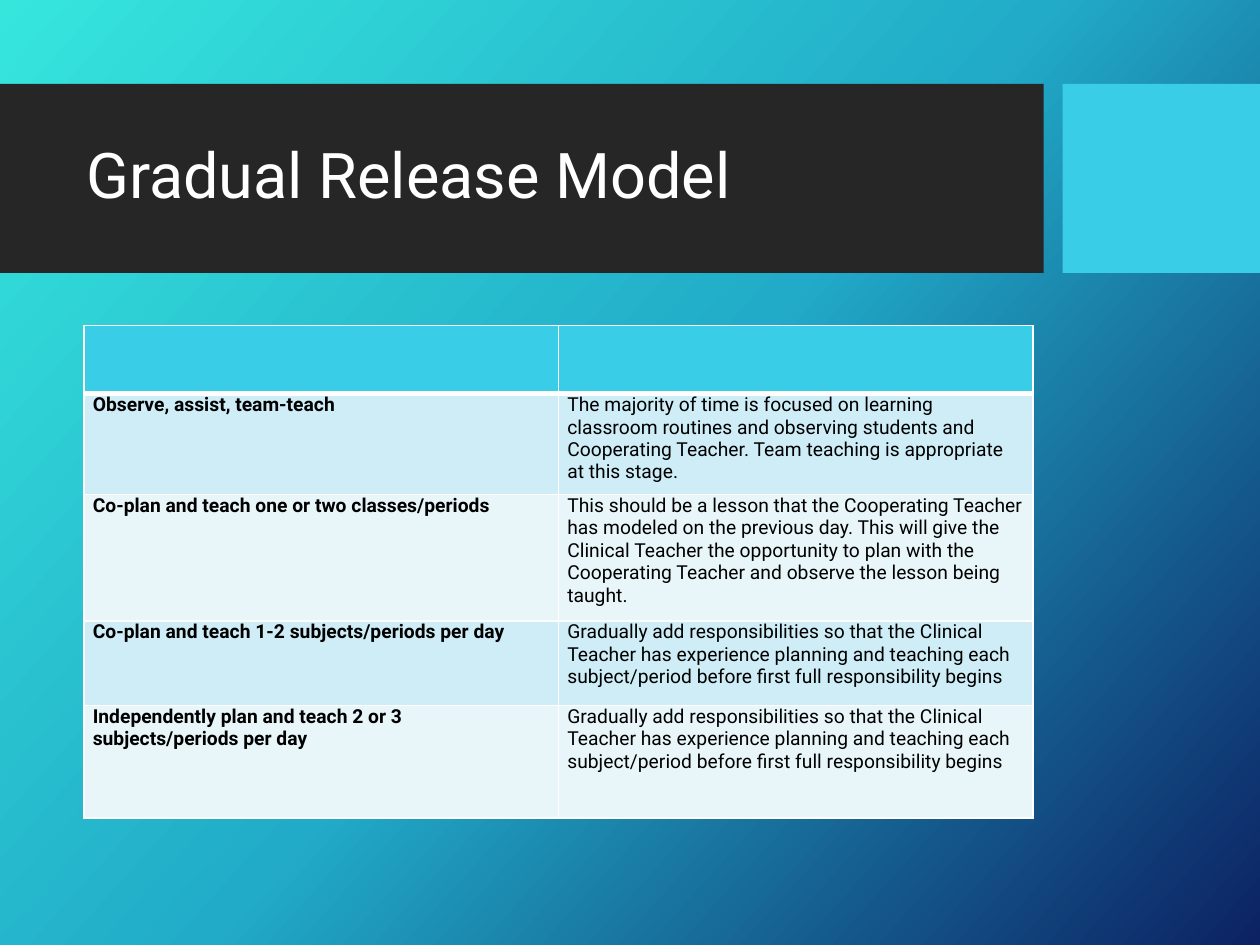
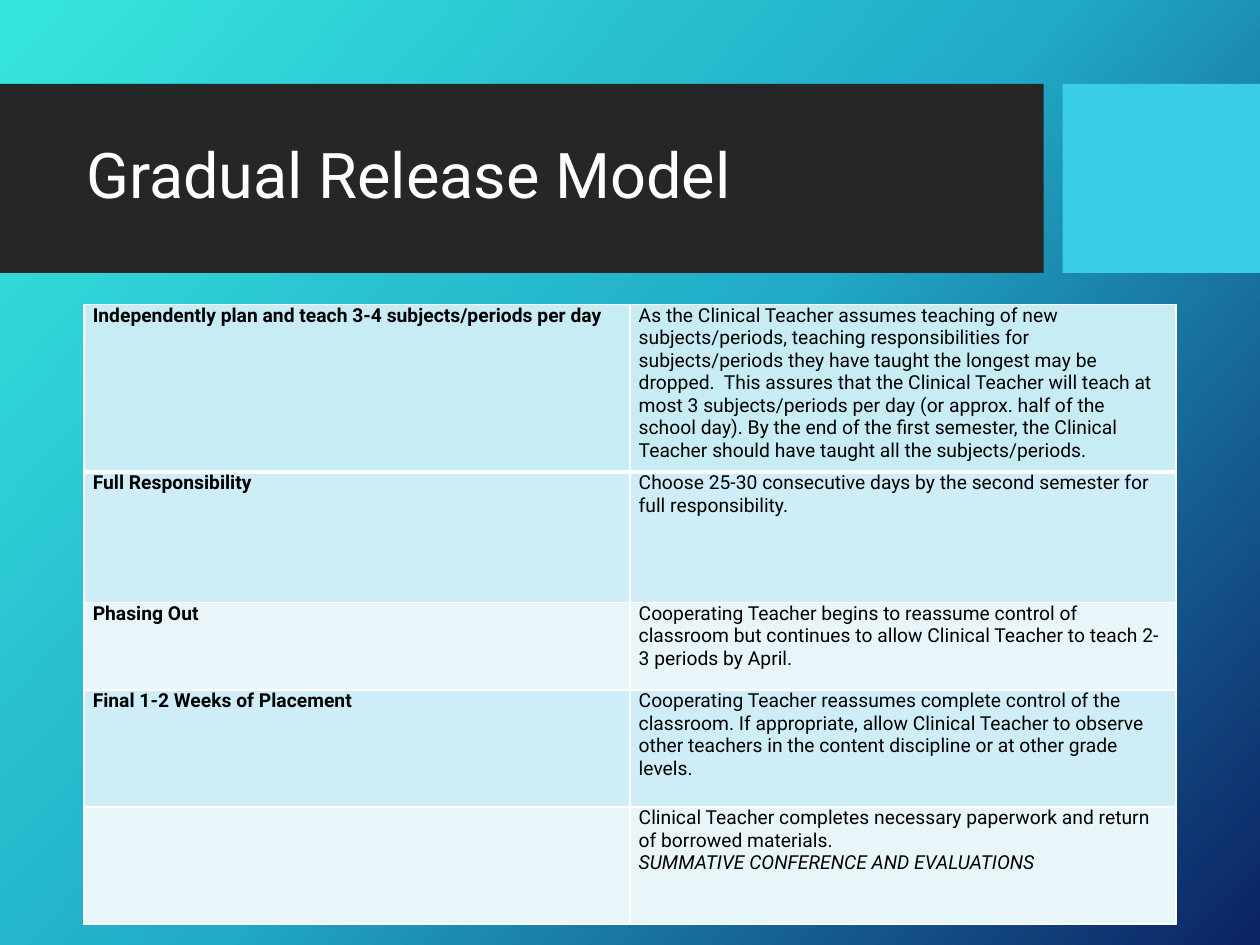
from copy import deepcopy

from lxml import etree
from pptx import Presentation
from pptx.dml.color import RGBColor
from pptx.enum.shapes import MSO_SHAPE
from pptx.enum.text import MSO_ANCHOR, MSO_AUTO_SIZE, PP_ALIGN
from pptx.oxml.ns import qn
from pptx.util import Inches, Pt

RECTANGLE = MSO_SHAPE.RECTANGLE
MIDDLE = MSO_ANCHOR.MIDDLE
LEFT = PP_ALIGN.LEFT
NO_AUTOFIT = MSO_AUTO_SIZE.NONE

WIDTH, HEIGHT = Inches(10), Inches(7.5)
COLUMN, ROW = WIDTH / 60, HEIGHT / 90
FONT = "Roboto"
TITLE = "Gradual Release Model"
TITLE_LAYOUT = 5

WHITE = RGBColor(0xFF, 0xFF, 0xFF)
BLACK = RGBColor(0x00, 0x00, 0x00)
CHARCOAL = RGBColor(0x26, 0x26, 0x26)
CYAN = RGBColor(0x39, 0xCD, 0xE7)
AQUA = RGBColor(0xC8, 0xEC, 0xF4)
BAND_DARK = RGBColor(0xCE, 0xED, 0xF6)
BAND_LIGHT = RGBColor(0xE8, 0xF6, 0xFA)
GRADIENT = [
    (0, RGBColor(0x36, 0xE6, 0xDD)),
    (0.5, RGBColor(0x21, 0xAB, 0xC8)),
    (1, RGBColor(0x0C, 0x22, 0x63)),
]
GRADIENT_ANGLE = 318

TITLE_BAND = (0, 8, 49.7, 18)
ACCENT_BAND = (50.6, 8, 9.4, 18)
TITLE_BOX = (3.5, 9.85, 45.25, 14.15)

GRADUAL = (
    "Gradually add responsibilities so that the Clinical Teacher has experience "
    "planning and teaching each subject/period before first full responsibility begins"
)
EARLY_STAGES = [
    (6.5, "", []),
    (9.6, "Observe, assist, team-teach", [
        "The majority of time is focused on learning classroom routines and observing "
        "students and Cooperating Teacher. Team teaching is appropriate at this stage."]),
    (12.05, "Co-plan and teach one or two classes/periods", [
        "This should be a lesson that the Cooperating Teacher has modeled on the previous "
        "day. This will give the Clinical Teacher the opportunity to plan with the "
        "Cooperating Teacher and observe the lesson being taught."]),
    (8.05, "Co-plan and teach 1-2 subjects/periods per day", [GRADUAL]),
    (10.7, "Independently plan and teach 2 or 3 subjects/periods per day", [GRADUAL]),
]
LATER_STAGES = [
    (15.95, "Independently plan and teach 3-4 subjects/periods per day", [
        "As the Clinical Teacher assumes teaching of new subjects/periods, teaching "
        "responsibilities for subjects/periods they have taught the longest may be "
        "dropped.  This assures that the Clinical Teacher will teach at most 3 "
        "subjects/periods per day (or approx. half of the school day). By the end of the "
        "first semester, the Clinical Teacher should have taught all the subjects/periods."]),
    (12.45, "Full Responsibility", [
        "Choose 25-30 consecutive days by the second semester for full responsibility."]),
    (8.3, "Phasing Out", [
        "Cooperating Teacher begins to reassume control of classroom but continues to "
        "allow Clinical Teacher to teach 2-3 periods by April."]),
    (11.15, "Final 1-2 Weeks of Placement", [
        "Cooperating Teacher reassumes complete control of the classroom. If appropriate, "
        "allow Clinical Teacher to observe other teachers in the content discipline or at "
        "other grade levels."]),
    (11.15, "", [
        "Clinical Teacher completes necessary paperwork and return of borrowed materials.",
        "SUMMATIVE CONFERENCE AND EVALUATIONS"]),
]


def grid_box(left, top, width, height):
    return round(left * COLUMN), round(top * ROW), round(width * COLUMN), round(height * ROW)


def place(shape, box):
    shape.left, shape.top, shape.width, shape.height = grid_box(*box)


def add_span(para, text, size, color, bold=False, italic=False):
    span = para.add_run()
    span.text = text
    font = span.font
    font.name, font.size, font.bold, font.italic = FONT, Pt(size), bold, italic
    font.color.rgb = color


def paint_background(master):
    fill = master.background.fill
    fill.gradient()
    fill.gradient_angle = GRADIENT_ANGLE
    stop_list = master._element.xpath(".//p:bg//a:gsLst")[0]
    stop_list.append(deepcopy(stop_list[0]))
    for stop, (position, color) in zip(fill.gradient_stops, GRADIENT):
        stop.position = position
        stop.color.rgb = color


def move_bands_to_layout(page):
    for depth, (box, color) in enumerate([(TITLE_BAND, CHARCOAL), (ACCENT_BAND, CYAN)]):
        band = page.shapes.add_shape(RECTANGLE, *grid_box(*box))
        band.shadow.inherit = False
        band.fill.solid()
        band.fill.fore_color.rgb = color
        band.line.fill.background()
        page.slide_layout.shapes._spTree.insert(2 + depth, band._element)


def add_title(page):
    title = page.shapes.title
    place(title, TITLE_BOX)
    frame = title.text_frame
    frame.word_wrap = True
    frame.auto_size = NO_AUTOFIT
    frame.vertical_anchor = MIDDLE
    para = frame.paragraphs[0]
    para.alignment = LEFT
    para.line_spacing = 0.9
    add_span(para, TITLE, 36, WHITE)


def add_borders(cell, bottom_width):
    properties = cell._tc.get_or_add_tcPr()
    for side, width in (("L", 1), ("R", 1), ("T", 1), ("B", bottom_width)):
        line = etree.SubElement(properties, qn(f"a:ln{side}"), w=str(Pt(width)))
        fill = etree.SubElement(line, qn("a:solidFill"))
        etree.SubElement(fill, qn("a:srgbClr"), val=str(WHITE))


def fill_cell(cell, texts, color, bold, bottom_width):
    add_borders(cell, bottom_width)
    cell.fill.solid()
    cell.fill.fore_color.rgb = color
    cell.margin_left = cell.margin_right = Inches(0.07)
    cell.margin_top = cell.margin_bottom = 0
    frame = cell.text_frame
    for index, text in enumerate(texts):
        para = frame.add_paragraph() if index else frame.paragraphs[0]
        add_span(para, text, 11, BLACK, bold, italic=index > 0)


def add_stage_table(page, left, top, width, stages, first_color):
    height = sum(stage[0] for stage in stages)
    box = grid_box(left, top, width, height)
    table = page.shapes.add_table(len(stages), 2, *box).table
    table.first_row = table.horz_banding = False
    for index, (row_height, stage, details) in enumerate(stages):
        table.rows[index].height = round(row_height * ROW)
        band_color = BAND_DARK if index % 2 else BAND_LIGHT
        color = band_color if index else first_color
        bottom_width = 1 if index else 3
        names = [stage] if stage else []
        fill_cell(table.cell(index, 0), names, color, True, bottom_width)
        fill_cell(table.cell(index, 1), details, color, False, bottom_width)


def add_stage_page(deck, *table_settings):
    page = deck.slides.add_slide(deck.slide_layouts[TITLE_LAYOUT])
    add_title(page)
    add_stage_table(page, *table_settings)
    return page


def main():
    deck = Presentation()
    deck.slide_width, deck.slide_height = WIDTH, HEIGHT
    paint_background(deck.slide_master)
    first_page = add_stage_page(deck, 4, 31, 45.2, EARLY_STAGES, CYAN)
    move_bands_to_layout(first_page)
    add_stage_page(deck, 4, 29, 52, LATER_STAGES, AQUA)
    deck.save("out.pptx")


if __name__ == "__main__":
    main()
